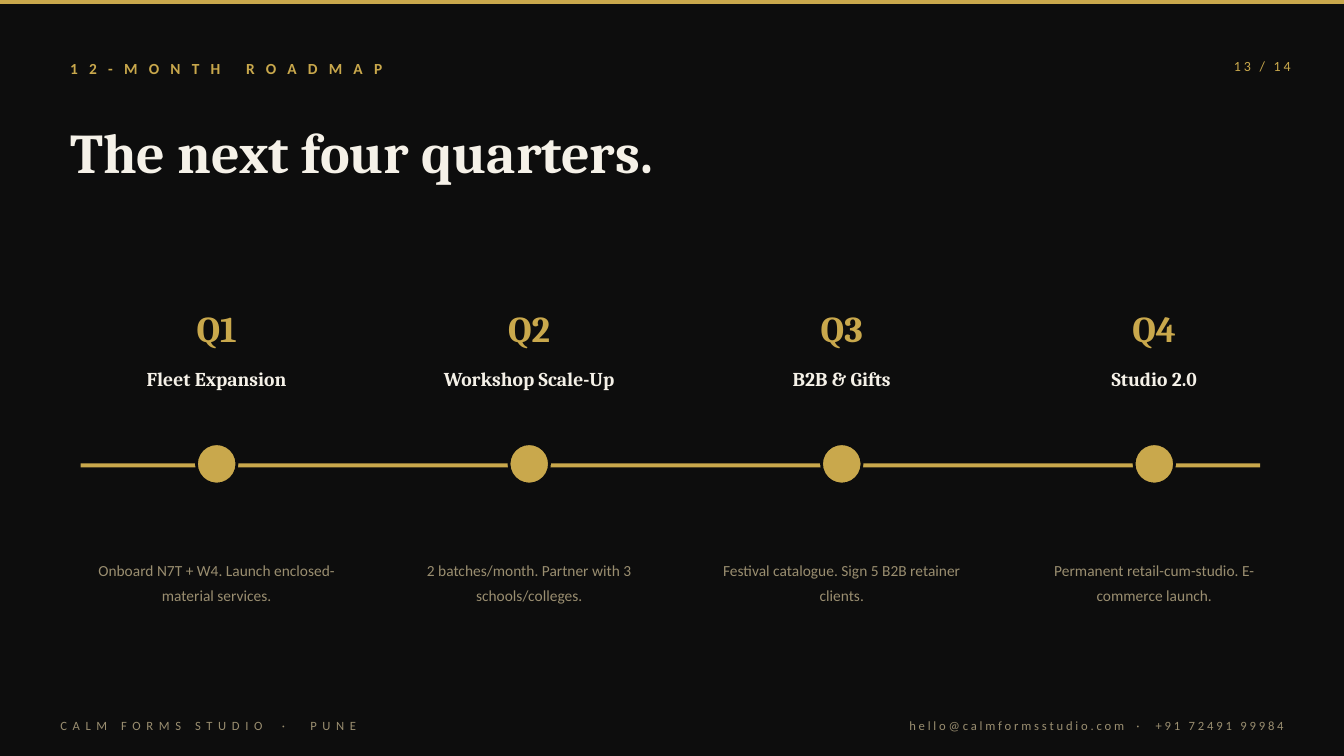
from pptx import Presentation
from pptx.dml.color import RGBColor
from pptx.enum.shapes import MSO_SHAPE
from pptx.enum.text import MSO_ANCHOR, MSO_AUTO_SIZE, PP_ALIGN
from pptx.util import Cm, Pt

RECT, OVAL = MSO_SHAPE.RECTANGLE, MSO_SHAPE.OVAL
LEFT, CENTER, RIGHT = PP_ALIGN.LEFT, PP_ALIGN.CENTER, PP_ALIGN.RIGHT
MIDDLE, NO_FIT = MSO_ANCHOR.MIDDLE, MSO_AUTO_SIZE.NONE
TITLE_ONLY = 5


class Theme:
    black = RGBColor(0x0D, 0x0D, 0x0D)
    gold = RGBColor(0xC9, 0xA8, 0x4C)
    cream = RGBColor(0xF5, 0xF1, 0xE8)
    taupe = RGBColor(0x9A, 0x8E, 0x70)
    # font, size, colour, bold, tracking in points
    title = ("Cambria", 40, cream, True, 0)
    eyebrow = ("Calibri", 11, gold, True, 8)
    page = ("Calibri", 10, gold, False, 2)
    quarter = ("Cambria", 26, gold, True, 0)
    theme_name = ("Cambria", 14, cream, True, 0)
    detail = ("Calibri", 11, taupe, False, 0)
    studio = ("Calibri", 9, taupe, False, 4)
    contact = ("Calibri", 9, taupe, False, 2)


prs = Presentation()
prs.slide_width, prs.slide_height = Cm(33.86), Cm(19.05)
s = prs.slides.add_slide(prs.slide_layouts[TITLE_ONLY])
s.background.fill.solid()
s.background.fill.fore_color.rgb = Theme.black


def write(text, x, y, w, h, style, align=LEFT, sp=None):
    """Fill a text box, or the given placeholder, with one styled paragraph."""
    sp = sp or s.shapes.add_textbox(0, 0, 0, 0)
    sp.left, sp.top, sp.width, sp.height = Cm(x), Cm(y), Cm(w), Cm(h)
    tf = sp.text_frame
    tf.word_wrap, tf.auto_size, tf.vertical_anchor = True, NO_FIT, MIDDLE
    p = tf.paragraphs[0]
    p.alignment = align
    font, size, color, bold, tracking = style
    # A dot separator stands in wider tracking than the words beside it
    for part in filter(None, text.partition(" · ")):
        r = p.add_run()
        r.text = part
        r.font.name, r.font.size, r.font.bold = font, Pt(size), bold
        r.font.color.rgb = color
        spread = tracking + (tracking + 2) * 2 / 3 if part == " · " else tracking
        if spread:
            r._r.get_or_add_rPr().set("spc", str(round(spread * 100)))
    return p


def gold_shape(kind, x, y, w, h):
    sp = s.shapes.add_shape(kind, Cm(x), Cm(y), Cm(w), Cm(h))
    sp.shadow.inherit = False
    sp.fill.solid()
    sp.fill.fore_color.rgb = Theme.gold
    sp.line.fill.background()
    return sp


# Top bar and footer
gold_shape(RECT, 0, 0, 33.86, 0.1)
write("CALM FORMS STUDIO · PUNE", 1.27, 17.91, 15.24, 0.76, Theme.studio)
write("hello@calmformsstudio.com · +91 72491 99984",
      17.35, 17.91, 15.24, 0.76, Theme.contact, RIGHT)

# Heading
write("12-MONTH ROADMAP", 1.52, 1.27, 20.32, 0.89, Theme.eyebrow)
write("13 / 14", 30.48, 1.27, 2.29, 0.76, Theme.page, RIGHT)
write("The next four quarters.", 1.52, 2.29, 30.48, 3.05, Theme.title,
      sp=s.shapes.title)

# Timeline, one column per quarter
gold_shape(RECT, 2.03, 11.68, 29.72, 0.1)
quarters = [
    ("Fleet Expansion", "Onboard N7T + W4. Launch enclosed-material services."),
    ("Workshop Scale-Up", "2 batches/month. Partner with 3 schools/colleges."),
    ("B2B & Gifts", "Festival catalogue. Sign 5 B2B retainer clients."),
    ("Studio 2.0", "Permanent retail-cum-studio. E-commerce launch."),
]
first_center, pitch = 5.46, 7.874
label_w, detail_w, dot = 7.37, 6.86, 1.02
for i, (name, detail) in enumerate(quarters):
    center = first_center + i * pitch
    marker = gold_shape(OVAL, center - dot / 2, 11.18, dot, dot)
    marker.line.color.rgb = Theme.black
    marker.line.width = Pt(2)
    label_x = center - label_w / 2
    write(f"Q{i + 1}", label_x, 7.62, label_w, 1.27, Theme.quarter, CENTER)
    write(name, label_x, 9.02, label_w, 1.02, Theme.theme_name, CENTER)
    p = write(detail, center - detail_w / 2, 12.7, detail_w, 3.81,
              Theme.detail, CENTER)
    p.line_spacing = 1.35

prs.save("out.pptx")
